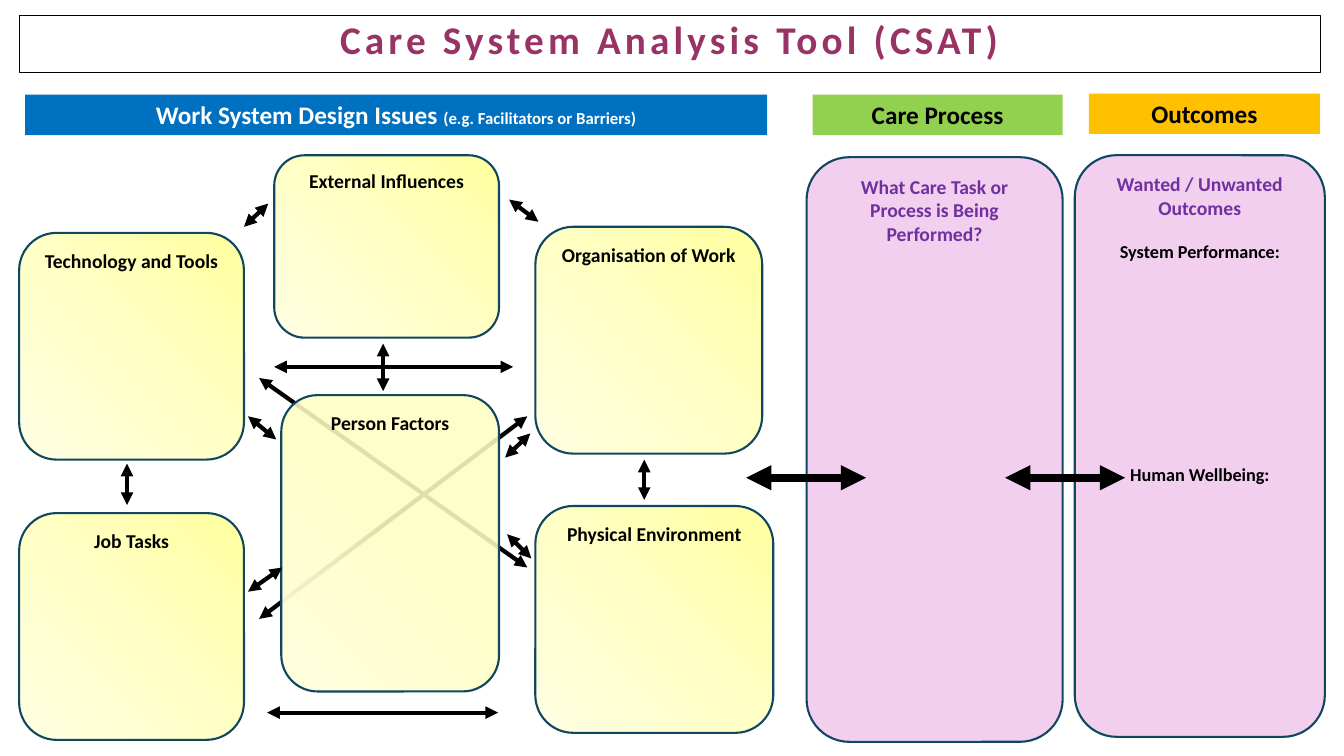
from dataclasses import dataclass

from lxml import etree
from pptx import Presentation
from pptx.dml.color import RGBColor
from pptx.enum.shapes import MSO_CONNECTOR, MSO_SHAPE
from pptx.enum.text import MSO_ANCHOR, MSO_AUTO_SIZE, PP_ALIGN
from pptx.oxml.ns import qn
from pptx.util import Inches, Pt

STRAIGHT = MSO_CONNECTOR.STRAIGHT
RECTANGLE = MSO_SHAPE.RECTANGLE
ROUNDED = MSO_SHAPE.ROUNDED_RECTANGLE
TOP = MSO_ANCHOR.TOP
NO_AUTOSIZE = MSO_AUTO_SIZE.NONE
CENTER = PP_ALIGN.CENTER


@dataclass(frozen=True)
class Theme:
    font: str = "Calibri"
    black: str = "000000"
    white: str = "FFFFFF"
    title: str = "993366"
    question: str = "7030A0"
    outline: str = "104760"
    panel: str = "F2CFEE"
    blue: str = "0070C0"
    green: str = "92D050"
    amber: str = "FFC000"
    title_size: int = 28
    band_size: int = 18
    card_size: int = 14
    measure_size: int = 13
    note_size: int = 12


THEME = Theme()

TITLE = "Care System Analysis Tool (CSAT)"
TITLE_AREA = (0.19, 0.15, 12.9, 0.57)

YELLOW_STOPS = [(0, "FFFFA0", 100), (50, "FFFFC5", 100), (100, "FFFFE3", 100)]
SHEER_STOPS = [(50, "FFFFC5", 88), (100, "FFFFE3", 100)]

CARDS = [
    ("Person Factors", (2.79, 3.92, 2.16, 2.94), SHEER_STOPS),
    ("Technology and Tools", (0.19, 2.31, 2.23, 2.25), YELLOW_STOPS),
    ("Job Tasks", (0.19, 5.09, 2.23, 2.25), YELLOW_STOPS),
    ("Physical Environment", (5.31, 5.02, 2.36, 2.25), YELLOW_STOPS),
    ("Organisation of Work", (5.31, 2.25, 2.25, 2.25), YELLOW_STOPS),
    ("External Influences", (2.72, 1.54, 2.23, 1.81), YELLOW_STOPS),
]

PANELS = [
    ((8, 1.56, 2.54, 5.8), [
        ("What Care Task or Process is Being Performed?", THEME.card_size, THEME.question, 0),
    ]),
    ((10.66, 1.54, 2.48, 5.77), [
        ("Wanted / Unwanted", THEME.card_size, THEME.question, 0),
        ("Outcomes", THEME.card_size, THEME.question, 0),
        ("System Performance:", THEME.measure_size, THEME.black, 14.6),
        ("Human Wellbeing:", THEME.measure_size, THEME.black, 144),
    ]),
]

BANDS = [
    ((0.25, 0.94, 7.36, 0.4), THEME.blue, THEME.white,
     [("Work System Design Issues ", THEME.band_size),
      ("(e.g. Facilitators or Barriers)", THEME.note_size)]),
    ((8.06, 0.94, 2.48, 0.4), THEME.green, THEME.black, [("Care Process", THEME.band_size)]),
    ((10.8, 0.93, 2.29, 0.4), THEME.amber, THEME.black, [("Outcomes", THEME.band_size)]),
]

CROSSING_ARROWS = [(2.57, 6.14, 5.23, 4.13), (2.57, 3.75, 5.23, 5.63)]
CARD_ARROWS = [
    (5.03, 5.3, 5.27, 5.54),
    (2.8, 5.63, 2.46, 5.87),
    (5.26, 4.3, 5.01, 4.54),
    (2.46, 4.13, 2.74, 4.36),
    (2.65, 7.07, 4.94, 7.07),
    (2.72, 3.64, 5.09, 3.64),
    (6.39, 4.56, 6.39, 4.96),
    (1.26, 4.6, 1.26, 5.01),
    (2.66, 2.02, 2.42, 2.25),
    (5.05, 1.98, 5.34, 2.2),
    (3.8, 3.41, 3.8, 3.88),
]
FLOW_ARROWS = [(7.4, 4.74, 8.59, 4.74), (9.97, 4.74, 11.16, 4.74)]


def rgb(color):
    return RGBColor.from_string(color)


def style_font(font, size, color):
    font.name = THEME.font
    font.size = Pt(size)
    font.bold = True
    font.color.rgb = rgb(color)


def prepare_frame(frame):
    frame.word_wrap = True
    frame.auto_size = NO_AUTOSIZE
    frame.vertical_anchor = TOP


def add_box(page, kind, area):
    box = page.shapes.add_shape(kind, *map(Inches, area))
    box.shadow.inherit = False
    prepare_frame(box.text_frame)
    return box


def add_rounded(page, area, lines):
    box = add_box(page, ROUNDED, area)
    box.line.color.rgb = rgb(THEME.outline)
    box.line.width = Pt(1.5)
    frame = box.text_frame
    for index, (text, size, color, space) in enumerate(lines):
        para = frame.add_paragraph() if index else frame.paragraphs[0]
        para.text = text
        para.alignment = CENTER
        if space:
            para.space_before = Pt(space)
        style_font(para.font, size, color)
    return box


def fill_from_top_right(box, stops):
    gradient = etree.Element(qn("a:gradFill"), rotWithShape="1")
    stop_list = etree.SubElement(gradient, qn("a:gsLst"))
    for position, color, opacity in stops:
        stop = etree.SubElement(stop_list, qn("a:gs"), pos=str(position * 1000))
        shade = etree.SubElement(stop, qn("a:srgbClr"), val=color)
        if opacity < 100:
            etree.SubElement(shade, qn("a:alpha"), val=str(opacity * 1000))
    circle = etree.SubElement(gradient, qn("a:path"), {"path": "circle"})
    etree.SubElement(circle, qn("a:fillToRect"), l="100000", b="100000")
    box._element.spPr.find(qn("a:prstGeom")).addnext(gradient)


def add_arrows(page, arrows, width):
    for ends in arrows:
        arrow = page.shapes.add_connector(STRAIGHT, *map(Inches, ends))
        arrow.line.color.rgb = rgb(THEME.black)
        arrow.line.width = Pt(width)
        properties = arrow._element.spPr
        outline = properties.find(qn("a:ln"))
        for end in ("a:headEnd", "a:tailEnd"):
            etree.SubElement(outline, qn(end), type="triangle")
        etree.SubElement(properties, qn("a:effectLst"))


def add_title(page):
    title = page.shapes.title
    title.left, title.top, title.width, title.height = map(Inches, TITLE_AREA)
    title.line.color.rgb = rgb(THEME.black)
    title.line.width = Pt(0.25)
    prepare_frame(title.text_frame)
    para = title.text_frame.paragraphs[0]
    span = para.add_run()
    span.text = TITLE
    para.alignment = CENTER
    para.line_spacing = 0.9
    style_font(para.font, THEME.title_size, THEME.title)
    span._r.get_or_add_rPr().set("spc", "300")


def add_band(page, area, fill, color, spans):
    band = add_box(page, RECTANGLE, area)
    band.fill.solid()
    band.fill.fore_color.rgb = rgb(fill)
    band.line.fill.background()
    para = band.text_frame.paragraphs[0]
    para.alignment = CENTER
    for text, size in spans:
        span = para.add_run()
        span.text = text
        style_font(span.font, size, color)


def main():
    deck = Presentation()
    deck.slide_width, deck.slide_height = Inches(13.33), Inches(7.5)
    page = deck.slides.add_slide(deck.slide_layouts[5])
    add_title(page)
    add_arrows(page, CROSSING_ARROWS, 3)
    for name, area, stops in CARDS:
        card = add_rounded(page, area, [(name, THEME.card_size, THEME.black, 0)])
        fill_from_top_right(card, stops)
    add_arrows(page, CARD_ARROWS, 3)
    for area, lines in PANELS:
        panel = add_rounded(page, area, lines)
        panel.fill.solid()
        panel.fill.fore_color.rgb = rgb(THEME.panel)
    for band in BANDS:
        add_band(page, *band)
    add_arrows(page, FLOW_ARROWS, 6)
    deck.save("out.pptx")


if __name__ == "__main__":
    main()
